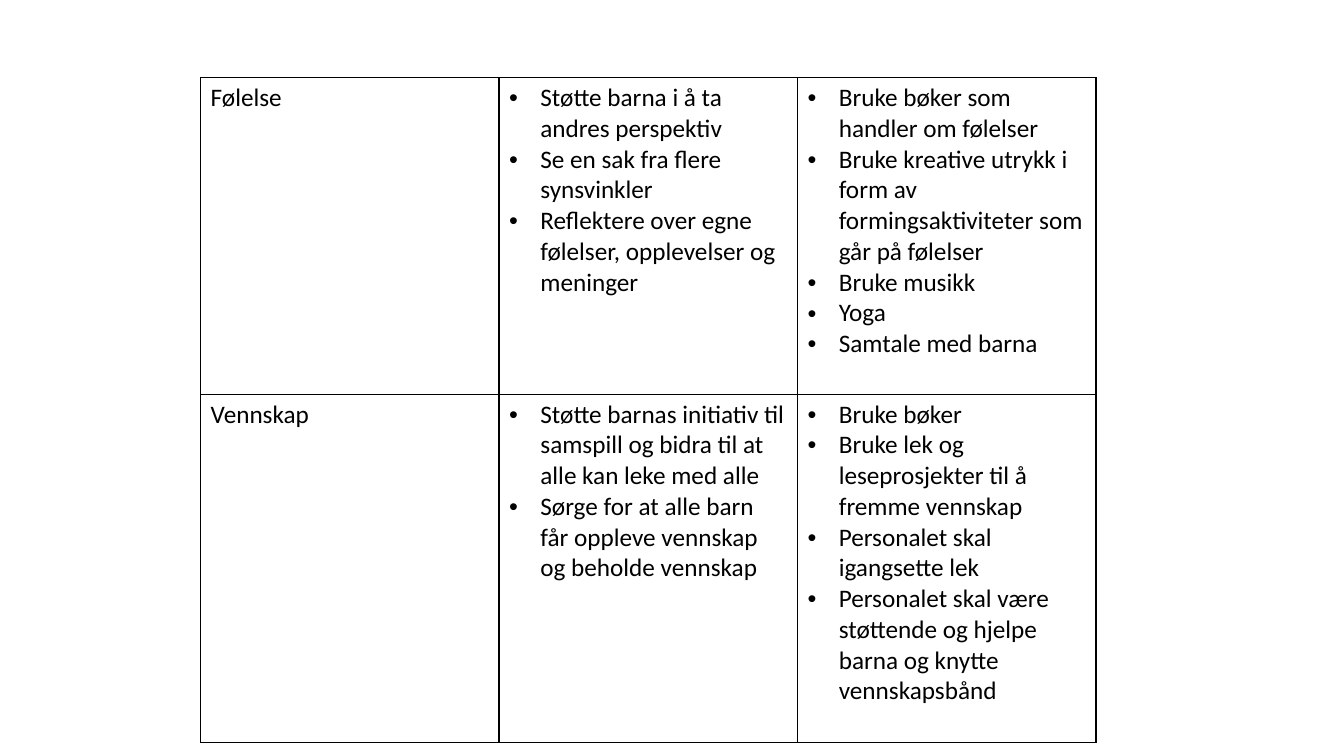
from lxml.etree import SubElement
from pptx import Presentation
from pptx.dml.color import RGBColor
from pptx.oxml.ns import qn
from pptx.util import Inches, Pt

COLORS = {"text": "000000", "border": "000000"}
FONT = {"name": "Calibri", "size": Pt(18), "bold": False}
TABLE_FLAGS = {"first_row": False, "horz_banding": False}
LEFT, TOP, COLUMN_WIDTH = 1.99, 0.77, 2.96
ROW_HEIGHTS = [3.14, 3.46]
BULLET_INDENT = Inches(0.31)

# Each row: theme, goals, measures
ROWS = [
    (
        ["Følelse"],
        [
            "Støtte barna i å ta andres perspektiv",
            "Se en sak fra flere synsvinkler",
            "Reflektere over egne følelser, opplevelser og meninger",
        ],
        [
            "Bruke bøker som handler om følelser",
            "Bruke kreative utrykk i form av formingsaktiviteter som går på følelser",
            "Bruke musikk",
            "Yoga",
            "Samtale med barna",
        ],
    ),
    (
        ["Vennskap"],
        [
            "Støtte barnas initiativ til samspill og bidra til at alle kan leke med alle",
            "Sørge for at alle barn får oppleve vennskap og beholde vennskap",
        ],
        [
            "Bruke bøker",
            "Bruke lek og leseprosjekter til å fremme vennskap",
            "Personalet skal igangsette lek",
            "Personalet skal være støttende og hjelpe barna og knytte vennskapsbånd",
        ],
    ),
]


def add_borders(cell):
    properties = cell._tc.get_or_add_tcPr()
    for position, side in enumerate(("lnL", "lnR", "lnT", "lnB")):
        line = SubElement(properties, qn(f"a:{side}"), w=str(Pt(1)))
        fill = SubElement(line, qn("a:solidFill"))
        SubElement(fill, qn("a:srgbClr"), val=COLORS["border"])
        properties.insert(position, line)


def add_bullet(paragraph):
    properties = paragraph._p.get_or_add_pPr()
    properties.set("marL", str(BULLET_INDENT))
    properties.set("indent", str(-BULLET_INDENT))
    SubElement(properties, qn("a:buFont"), typeface="Arial")
    SubElement(properties, qn("a:buChar"), char="•")


presentation = Presentation()
presentation.slide_width = Inches(13.33)
presentation.slide_height = Inches(7.5)
slide = presentation.slides.add_slide(presentation.slide_layouts[6])

# Table grid
column_count = len(ROWS[0])
table = slide.shapes.add_table(
    len(ROWS), column_count, Inches(LEFT), Inches(TOP),
    Inches(COLUMN_WIDTH * column_count), Inches(sum(ROW_HEIGHTS)),
).table
for name, value in TABLE_FLAGS.items():
    setattr(table, name, value)
for column in table.columns:
    column.width = Inches(COLUMN_WIDTH)
for row, height in zip(table.rows, ROW_HEIGHTS):
    row.height = Inches(height)

# Cell contents: the theme is plain, the other columns are bulleted
for row_index, row_texts in enumerate(ROWS):
    for column_index, texts in enumerate(row_texts):
        cell = table.cell(row_index, column_index)
        cell.fill.background()
        add_borders(cell)
        frame = cell.text_frame
        frame.text = "\n".join(texts)
        for paragraph in frame.paragraphs:
            if column_index > 0:
                add_bullet(paragraph)
            font = paragraph.runs[0].font
            for name, value in FONT.items():
                setattr(font, name, value)
            font.color.rgb = RGBColor.from_string(COLORS["text"])

presentation.save("out.pptx")
